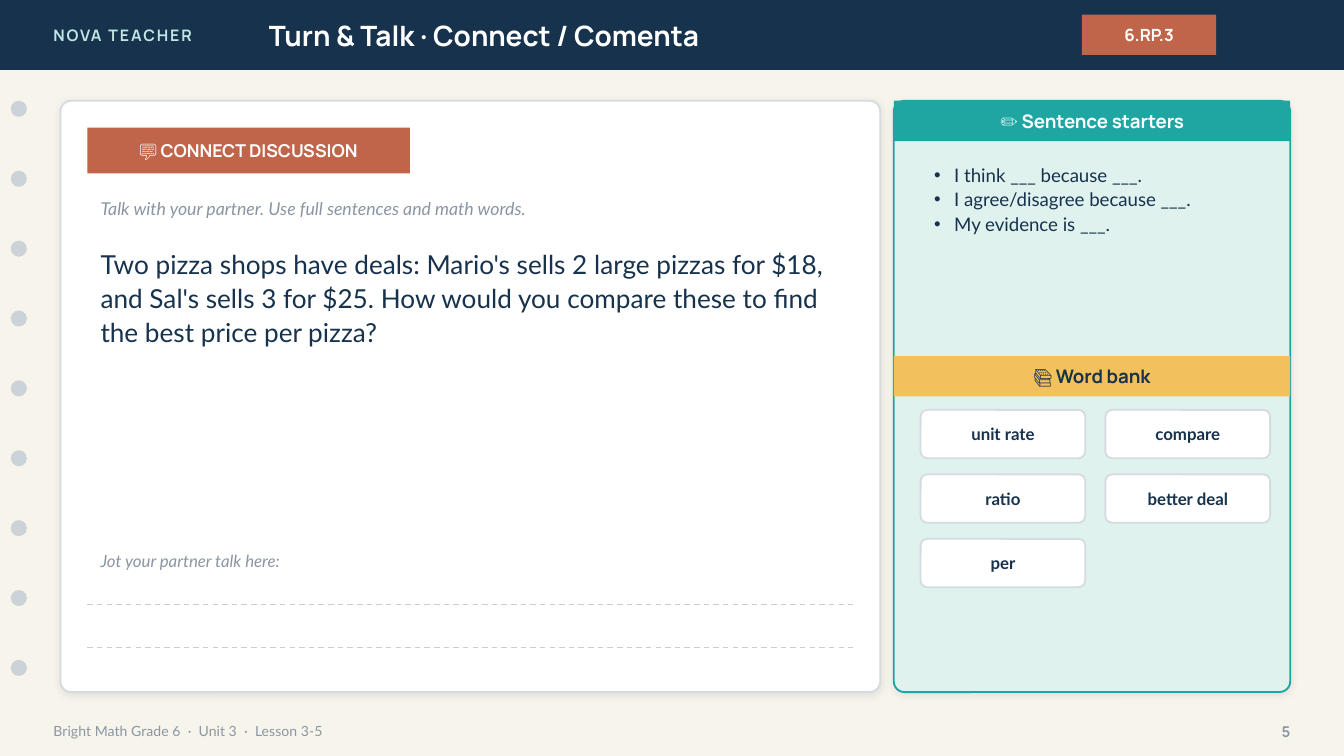
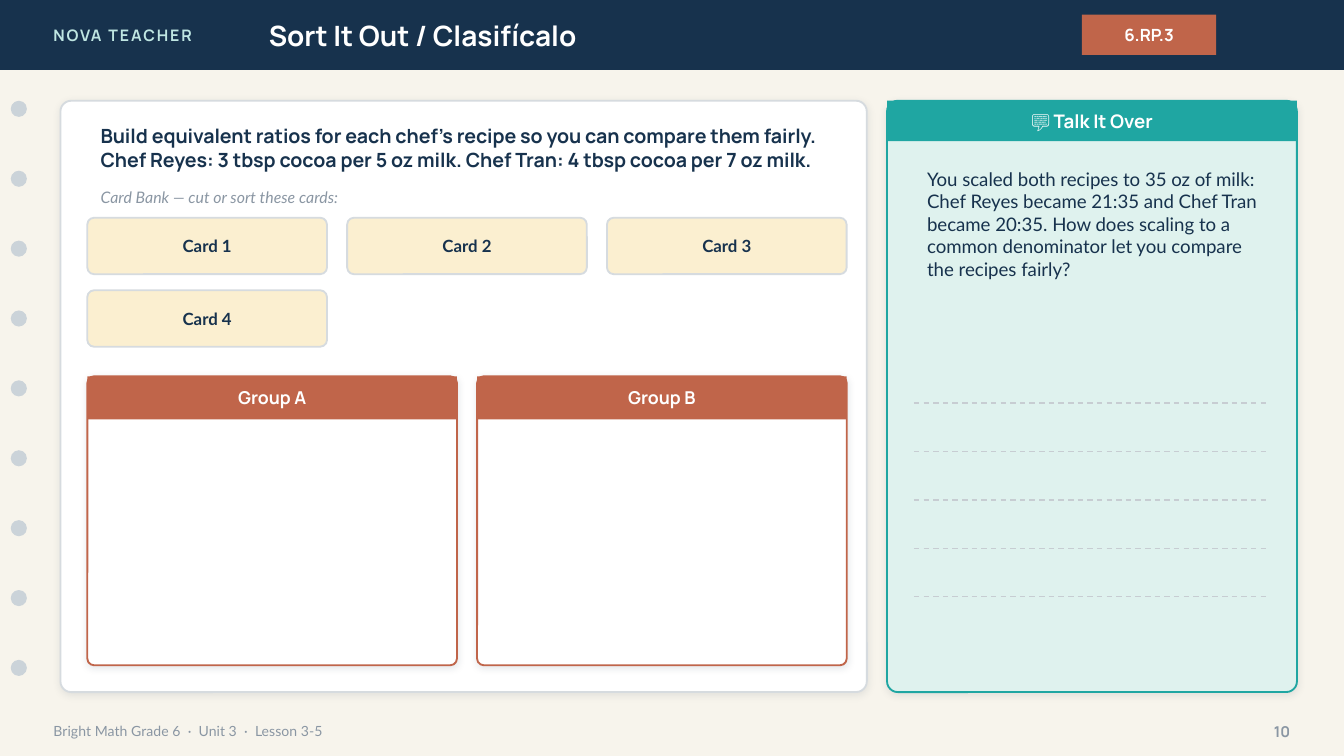
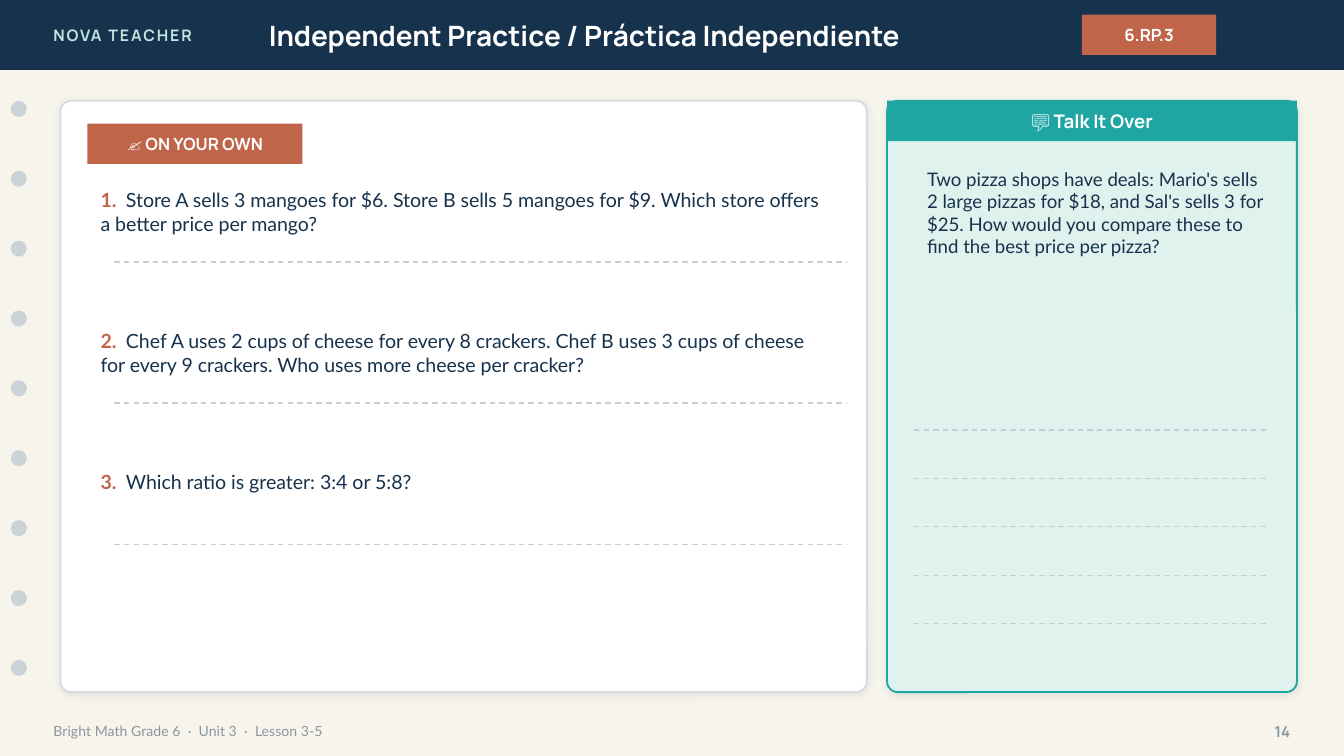
from collections import namedtuple

from lxml import etree
from pptx import Presentation
from pptx.dml.color import RGBColor
from pptx.enum.dml import MSO_LINE
from pptx.enum.shapes import MSO_CONNECTOR, MSO_SHAPE
from pptx.enum.text import MSO_ANCHOR, MSO_AUTO_SIZE, PP_ALIGN
from pptx.oxml.ns import qn
from pptx.util import Emu, Inches, Pt

RECTANGLE, ROUNDED, OVAL = MSO_SHAPE.RECTANGLE, MSO_SHAPE.ROUNDED_RECTANGLE, MSO_SHAPE.OVAL
STRAIGHT, DASH = MSO_CONNECTOR.STRAIGHT, MSO_LINE.DASH
TOP, MIDDLE = MSO_ANCHOR.TOP, MSO_ANCHOR.MIDDLE
LEFT, CENTER, RIGHT = PP_ALIGN.LEFT, PP_ALIGN.CENTER, PP_ALIGN.RIGHT
NO_AUTOFIT = MSO_AUTO_SIZE.NONE

# Colours
CREAM = RGBColor(0xF7, 0xF4, 0xEC)
NAVY = RGBColor(0x17, 0x32, 0x4D)
MINT = RGBColor(0xBF, 0xE6, 0xE2)
PALE_MINT = RGBColor(0xDF, 0xF2, 0xEE)
TEAL = RGBColor(0x1F, 0xA6, 0xA2)
CLAY = RGBColor(0xC0, 0x65, 0x4A)
AMBER = RGBColor(0xF2, 0xC1, 0x5B)
PALE_AMBER = RGBColor(0xFB, 0xEF, 0xD0)
WHITE = RGBColor(0xFF, 0xFF, 0xFF)
GREY = RGBColor(0x8A, 0x96, 0xA3)
DOT_GREY = RGBColor(0xCB, 0xD3, 0xD9)
EDGE_GREY = RGBColor(0xD6, 0xDB, 0xDF)
RULE_GREY = RGBColor(0xC7, 0xCD, 0xD2)
SHADOW_NAVY = "1C2E42"

# The page is a grid of 100 columns of square cells
PAGE_WIDTH = Inches(10)
PAGE_HEIGHT = PAGE_WIDTH * 9 // 16
CELL = PAGE_WIDTH // 100
HEADER_ROWS = 5.2
PANEL_TOP, PANEL_ROWS, HEADING_ROWS = 7.5, 44, 3
CARD_LEFT, CONTENT_LEFT = 4.5, 6.5
CONTENT_COLUMNS = 56.5
TILE_GAP = 1.5
SMALL_RADIUS, LARGE_RADIUS = 0.5, 0.8

# Text styles
Style = namedtuple("Style", "size font color bold italic", defaults=(False, False))
TITLE = Style(15, "Manrope", WHITE, True)
BRAND = Style(8.5, "Manrope", MINT, True)
TAG = Style(9, "Manrope", WHITE, True)
BADGE = Style(9.5, "Manrope", WHITE, True)
HEADING = Style(10, "Manrope", WHITE, True)
DARK_HEADING = HEADING._replace(color=NAVY)
TASK = Style(10.5, "Manrope", NAVY, True)
PAGE_NUMBER = Style(8, "Manrope", GREY, True)
FOOTER = Style(7.5, "Lato", GREY)
HINT = Style(9.5, "Lato", GREY, italic=True)
QUESTION = Style(14, "Lato", NAVY)
PROMPT = Style(10, "Lato", NAVY)
PROBLEM = Style(10.5, "Lato", NAVY)
TILE = Style(9, "Lato", NAVY, True)

PIZZA_QUESTION = (
    "Two pizza shops have deals: Mario's sells 2 large pizzas for $18, and Sal's sells 3 "
    "for $25. How would you compare these to find the best price per pizza?")


def cells(*counts):
    return [Emu(round(count * CELL)) for count in counts]


# Text
def write(shape, lines, style, align=LEFT, anchor=MIDDLE, spacing=None):
    frame = shape.text_frame
    frame.word_wrap = True
    frame.auto_size = NO_AUTOFIT
    frame.vertical_anchor = anchor
    frame.text = "\n".join(lines)
    for paragraph in frame.paragraphs:
        paragraph.alignment = align
        if spacing:
            paragraph.line_spacing = spacing
        font = paragraph.font
        font.size, font.name = Pt(style.size), style.font
        font.bold, font.italic = style.bold, style.italic
        font.color.rgb = style.color


def add_text(page, area, text, style, **layout):
    box = page.shapes.add_textbox(*cells(*area))
    write(box, [text], style, **layout)
    return box


def place(placeholder, area):
    """Move a placeholder to its area, in front of what is drawn so far."""
    placeholder.left, placeholder.top, placeholder.width, placeholder.height = cells(*area)
    placeholder._element.getparent().append(placeholder._element)


# Shapes
def add_block(page, kind, area, fill, edge=None, radius=None, text=None, style=None):
    block = page.shapes.add_shape(kind, *cells(*area))
    block.shadow.inherit = False
    block.fill.solid()
    block.fill.fore_color.rgb = fill
    if edge is None:
        block.line.fill.background()
    else:
        block.line.color.rgb = edge
        block.line.width = Pt(1)
    if radius:
        block.adjustments[0] = radius / min(area[2:])
    if text:
        write(block, [text], style, CENTER)
    return block


def add_panel(page, area, fill, edge, radius=LARGE_RADIUS):
    panel = add_block(page, ROUNDED, area, fill, edge, radius)
    effects = panel._element.spPr.find(qn("a:effectLst"))
    shadow = etree.SubElement(effects, qn("a:outerShdw"), blurRad=str(Pt(4)),
                              dist=str(Pt(1)), dir="5400000", rotWithShape="0")
    color = etree.SubElement(shadow, qn("a:srgbClr"), val=SHADOW_NAVY)
    etree.SubElement(color, qn("a:alpha"), val="10000")


def add_bar(page, area, text, fill=CLAY, style=BADGE):
    add_block(page, RECTANGLE, area, fill, text=text, style=style)


def add_writing_lines(page, left, right, top, count, step):
    for index in range(count):
        row = top + index * step
        rule = page.shapes.add_connector(STRAIGHT, *cells(left, row, right, row))
        rule.line.color.rgb = RULE_GREY
        rule.line.width = Pt(0.75)
        rule.line.dash_style = DASH
        etree.SubElement(rule._element.spPr, qn("a:effectLst"))


def tile_areas(count, columns, left, top, total_width, height, row_gap=1.2):
    width = (total_width - (columns - 1) * TILE_GAP) / columns
    return [(left + index % columns * (width + TILE_GAP),
             top + index // columns * (height + row_gap), width, height)
            for index in range(count)]


def add_tiles(page, labels, fill, *grid):
    for label, area in zip(labels, tile_areas(len(labels), *grid)):
        add_block(page, ROUNDED, area, fill, EDGE_GREY, SMALL_RADIUS, label, TILE)


# Parts shared by the pages
def add_page(deck, layout, title, number):
    page = deck.slides.add_slide(deck.slide_layouts.get_by_name(layout))
    page.background.fill.solid()
    page.background.fill.fore_color.rgb = CREAM
    # Header band
    add_block(page, RECTANGLE, (0, 0, 100, HEADER_ROWS), NAVY)
    brand = add_text(page, (3, 0, 24, HEADER_ROWS), "NOVA TEACHER", BRAND)
    brand.text_frame.paragraphs[0].font._rPr.set("spc", "100")
    place(page.shapes.title, (19, 0, 56, HEADER_ROWS))
    write(page.shapes.title, [title], TITLE)
    add_bar(page, (80.5, 1.1, 10, 3), "6.RP.3", style=TAG)
    # Binder holes
    for index in range(9):
        add_block(page, OVAL, (0.8, PANEL_TOP + index * 5.2, 1.2, 1.2), DOT_GREY)
    # Footer
    add_text(page, (3, 53, 70, 2.8), "Bright Math Grade 6  ·  Unit 3  ·  Lesson 3-5", FOOTER)
    add_text(page, (92, 53, 5, 2.8), str(number), PAGE_NUMBER, align=RIGHT)
    return page


def add_main_card(page, width=60):
    add_panel(page, (CARD_LEFT, PANEL_TOP, width, PANEL_ROWS), WHITE, EDGE_GREY)


def add_side_panel(page, left, width, heading):
    add_panel(page, (left, PANEL_TOP, width, PANEL_ROWS), PALE_MINT, TEAL)
    add_bar(page, (left, PANEL_TOP, width, HEADING_ROWS), heading, TEAL, HEADING)


def add_talk_panel(page, prompt, prompt_rows):
    add_side_panel(page, 66, 30.5, "💬 Talk It Over")
    add_text(page, (68, 12, 27, prompt_rows), prompt, PROMPT, anchor=TOP)
    add_writing_lines(page, 68, 94.5, 15 + prompt_rows, 5, 3.6)


def add_sentence_starters(page, area, starters):
    body = page.placeholders[1]
    place(body, area)
    body.text_frame.text = "\n".join(starters)
    write(body, starters, PROMPT, anchor=TOP, spacing=1.1)
    for paragraph in body.text_frame.paragraphs:
        paragraph.space_before = Pt(0)
        properties = paragraph._p.get_or_add_pPr()
        properties.set("marL", str(Inches(0.15)))
        properties.set("indent", str(-Inches(0.15)))


# Pages
def build_turn_and_talk(deck):
    page = add_page(deck, "Title and Content", "Turn & Talk · Connect / Comenta", 5)
    add_main_card(page, 61)
    add_bar(page, (CONTENT_LEFT, 9.5, 24, 3.4), "💬 CONNECT DISCUSSION")
    add_text(page, (CONTENT_LEFT, 14, 57, 3),
             "Talk with your partner. Use full sentences and math words.", HINT)
    add_text(page, (CONTENT_LEFT, 17.8, 57, 20), PIZZA_QUESTION, QUESTION,
             anchor=TOP, spacing=1.08)
    add_text(page, (CONTENT_LEFT, 40.5, 57, 2.5), "Jot your partner talk here:",
             HINT._replace(size=9))
    add_writing_lines(page, CONTENT_LEFT, 63.5, 45, 2, 3.2)

    add_side_panel(page, 66.5, 29.5, "✏️ Sentence starters")
    add_sentence_starters(page, (68.5, 11.5, 26, 14), [
        "I think ___ because ___.",
        "I agree/disagree because ___.",
        "My evidence is ___."])
    add_bar(page, (66.5, 26.5, 29.5, HEADING_ROWS), "📚 Word bank", AMBER, DARK_HEADING)
    words = ["unit rate", "compare", "ratio", "better deal", "per"]
    add_tiles(page, words, WHITE, 2, 68.5, 30.5, 26, 3.6)


def build_sort(deck):
    page = add_page(deck, "Title Only", "Sort It Out / Clasifícalo", 10)
    add_main_card(page)
    add_text(page, (CONTENT_LEFT, 9, 56, 4),
             "Build equivalent ratios for each chef's recipe so you can compare them fairly. "
             "Chef Reyes: 3 tbsp cocoa per 5 oz milk. Chef Tran: 4 tbsp cocoa per 7 oz milk.",
             TASK)
    add_text(page, (CONTENT_LEFT, 13.5, 56, 2.4), "Card Bank — cut or sort these cards:",
             HINT._replace(size=8.5))
    cards = [f"Card {number}" for number in range(1, 5)]
    add_tiles(page, cards, PALE_AMBER, 3, CONTENT_LEFT, 16.2, CONTENT_COLUMNS, 4.2)

    # Sorting groups
    groups = ["Group A", "Group B"]
    areas = tile_areas(len(groups), 2, CONTENT_LEFT, 28, CONTENT_COLUMNS, 21.5)
    for group, area in zip(groups, areas):
        add_panel(page, area, WHITE, CLAY, SMALL_RADIUS)
        add_bar(page, (*area[:3], 3.2), group)

    add_talk_panel(
        page,
        "You scaled both recipes to 35 oz of milk: Chef Reyes became 21:35 and Chef Tran "
        "became 20:35. How does scaling to a common denominator let you compare the "
        "recipes fairly?", 15)


def add_problem(page, number, text, top):
    box = add_text(page, (CONTENT_LEFT, top, CONTENT_COLUMNS, 5), f"{number}.  ",
                   PROBLEM, anchor=TOP)
    paragraph = box.text_frame.paragraphs[0]
    label = paragraph.runs[0]
    label.font.bold = True
    label.font.color.rgb = CLAY
    paragraph.add_run().text = text
    add_writing_lines(page, 8.5, 63, top + 6, 1, 0)


def build_practice(deck):
    page = add_page(deck, "Title Only", "Independent Practice / Práctica Independiente", 14)
    add_main_card(page)
    add_bar(page, (CONTENT_LEFT, 9.2, 16, 3), "✍️ ON YOUR OWN", style=TAG)
    problems = [
        "Store A sells 3 mangoes for $6. Store B sells 5 mangoes for $9. Which store offers "
        "a better price per mango?",
        "Chef A uses 2 cups of cheese for every 8 crackers. Chef B uses 3 cups of cheese for "
        "every 9 crackers. Who uses more cheese per cracker?",
        "Which ratio is greater: 3:4 or 5:8?"]
    for index, problem in enumerate(problems):
        add_problem(page, index + 1, problem, 13.5 + index * 10.5)
    add_talk_panel(page, PIZZA_QUESTION, 17)


def main():
    deck = Presentation()
    deck.slide_width, deck.slide_height = PAGE_WIDTH, PAGE_HEIGHT
    build_turn_and_talk(deck)
    build_sort(deck)
    build_practice(deck)
    deck.save("out.pptx")


if __name__ == "__main__":
    main()
